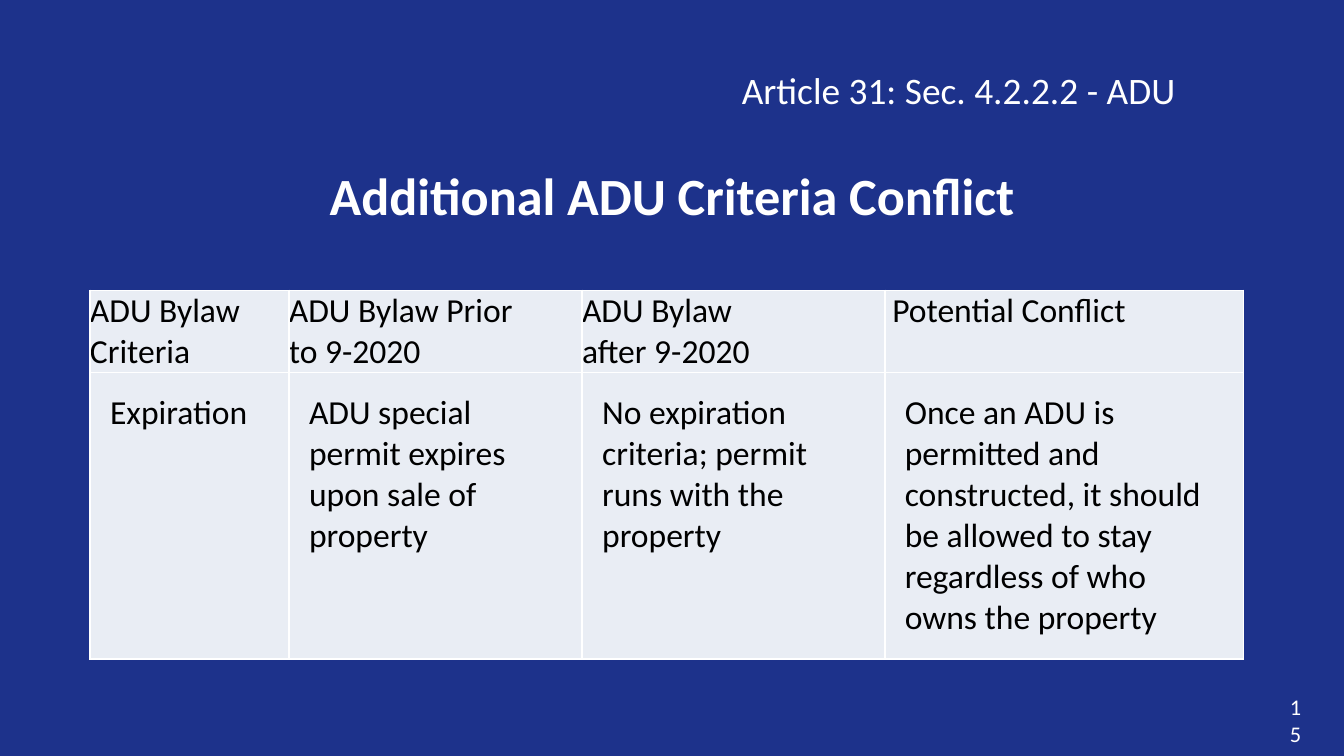
from dataclasses import dataclass

from lxml.etree import SubElement
from pptx import Presentation
from pptx.dml.color import RGBColor
from pptx.enum.text import MSO_ANCHOR, PP_ALIGN
from pptx.oxml.ns import qn
from pptx.slide import Slide
from pptx.table import _Cell
from pptx.text.text import TextFrame
from pptx.util import Cm, Pt

FONT = "Calibri"
COLOURS = {"background": "1D328B", "light": "FFFFFF", "text": "000000", "cell": "E9EDF4"}


@dataclass(frozen=True)
class Label:
    text: str
    left: float
    top: float
    width: float
    height: float
    size: int
    align: PP_ALIGN = PP_ALIGN.LEFT
    anchor: MSO_ANCHOR = MSO_ANCHOR.TOP


@dataclass(frozen=True)
class Row:
    height: float
    margin: float
    texts: tuple[str, ...]


TITLE = Label("Additional ADU Criteria Conflict", 1.27, 2.49, 22.86, 2.39, 28,
              PP_ALIGN.CENTER, MSO_ANCHOR.MIDDLE)
LABELS = (
    Label("15", 24.13, 13.23, 0.64, 0.76, 12, PP_ALIGN.RIGHT, MSO_ANCHOR.MIDDLE),
    Label("Article 31: Sec. 4.2.2.2 - ADU", 13.77, 1.14, 10.36, 1.12, 20),
)
COLUMN_WIDTHS = (3.76, 5.54, 5.72, 6.78)
ROWS = (
    Row(1.55, 0, (
        "ADU Bylaw Criteria",
        "ADU Bylaw Prior\nto 9-2020",
        "ADU Bylaw\nafter 9-2020",
        " Potential Conflict",
    )),
    Row(5.4, 0.38, (
        "Expiration",
        "ADU special permit expires upon sale of property",
        "No expiration criteria; permit runs with the property",
        "Once an ADU is permitted and constructed, it should be allowed to stay "
        "regardless of who owns the property",
    )),
)


def colour(name: str) -> RGBColor:
    return RGBColor.from_string(COLOURS[name])


def write_text(frame: TextFrame, text: str, size: int, colour_name: str,
               align: PP_ALIGN = PP_ALIGN.LEFT, bold: bool = False) -> None:
    frame.text = text
    frame.word_wrap = True
    for paragraph in frame.paragraphs:
        paragraph.alignment = align
        paragraph.font.name = FONT
        paragraph.font.size = Pt(size)
        paragraph.font.bold = bold
        paragraph.font.color.rgb = colour(colour_name)


def place_label(shape, label: Label, bold: bool = False) -> None:
    shape.left, shape.top = Cm(label.left), Cm(label.top)
    shape.width, shape.height = Cm(label.width), Cm(label.height)
    write_text(shape.text_frame, label.text, label.size, "light", label.align, bold)
    shape.text_frame.vertical_anchor = label.anchor


def set_borders(cell: _Cell) -> None:
    """Line all four sides; call before the fill, which must follow them in the XML."""
    properties = cell._tc.get_or_add_tcPr()
    for side in ("lnL", "lnR", "lnT", "lnB"):
        line = SubElement(properties, qn(f"a:{side}"), w=str(Pt(1)))
        fill = SubElement(line, qn("a:solidFill"))
        SubElement(fill, qn("a:srgbClr"), val=COLOURS["light"])


def add_criteria_table(slide: Slide) -> None:
    table = slide.shapes.add_table(
        len(ROWS), len(COLUMN_WIDTHS), Cm(1.7), Cm(5.49),
        Cm(sum(COLUMN_WIDTHS)), Cm(sum(row.height for row in ROWS))).table
    table.first_row = table.horz_banding = False
    for column, width in zip(table.columns, COLUMN_WIDTHS):
        column.width = Cm(width)
    for table_row, row in zip(table.rows, ROWS):
        table_row.height = Cm(row.height)
        for cell, text in zip(table_row.cells, row.texts):
            set_borders(cell)
            cell.fill.solid()
            cell.fill.fore_color.rgb = colour("cell")
            cell.margin_left = cell.margin_right = Cm(row.margin)
            cell.margin_top = cell.margin_bottom = Cm(row.margin)
            write_text(cell.text_frame, text, 18, "text")


def main() -> None:
    presentation = Presentation()
    presentation.slide_width, presentation.slide_height = Cm(25.4), Cm(14.29)
    slide = presentation.slides.add_slide(presentation.slide_layouts[5])
    slide.background.fill.solid()
    slide.background.fill.fore_color.rgb = colour("background")

    place_label(slide.shapes.title, TITLE, bold=True)
    add_criteria_table(slide)
    for label in LABELS:
        place_label(slide.shapes.add_textbox(0, 0, 0, 0), label)
    presentation.save("out.pptx")


if __name__ == "__main__":
    main()
